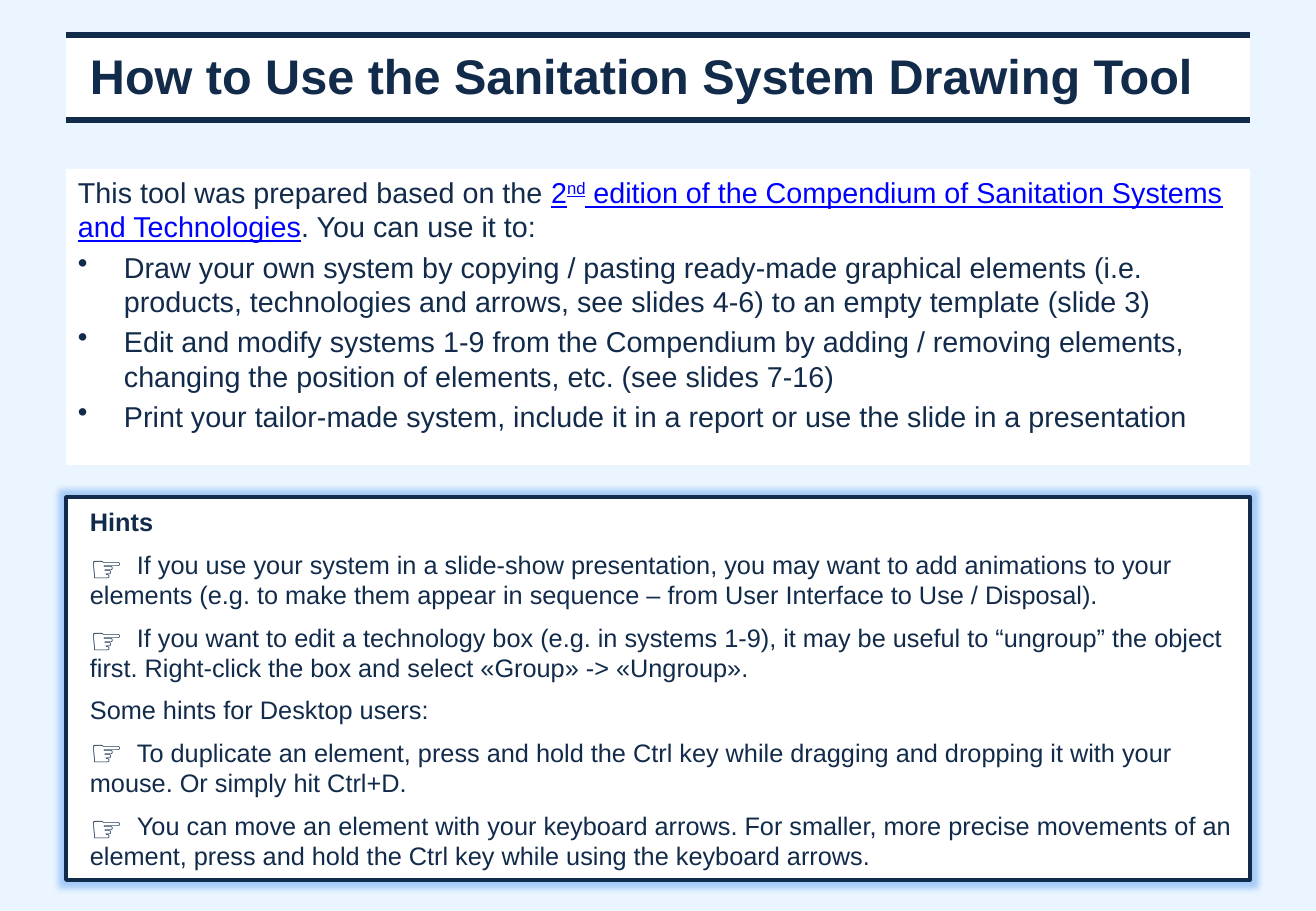
from lxml.etree import SubElement
from pptx import Presentation
from pptx.dml.color import RGBColor
from pptx.enum.shapes import MSO_CONNECTOR, MSO_SHAPE
from pptx.enum.text import MSO_ANCHOR, PP_ALIGN
from pptx.oxml.ns import qn
from pptx.util import Pt

PX = 7526
HEX = {"back": "EBF5FF", "box": "FFFFFF", "ink": "122B4A", "link": "0000FF", "glow": "3C8CED"}

TITLE = "How to Use the Sanitation System Drawing Tool"
INTRO = [  # text, part of the link, superscript
    ("This tool was prepared based on the ", False, False),
    ("2", True, False),
    ("nd", True, True),
    (" edition of the Compendium of Sanitation Systems and Technologies", True, False),
    (". You can use it to:", False, False),
]
USES = [
    "Draw your own system by copying / pasting ready-made graphical elements (i.e. products, "
    "technologies and arrows, see slides 4-6) to an empty template (slide 3)",
    "Edit and modify systems 1-9 from the Compendium by adding / removing elements, "
    "changing the position of elements, etc. (see slides 7-16)",
    "Print your tailor-made system, include it in a report or use the slide in a presentation",
]
HINTS = [  # text, top of its hand relative to the box (None: no hand)
    ("Hints", None),
    ("If you use your system in a slide-show presentation, you may want to add animations to your "
     "elements (e.g. to make them appear in sequence – from User Interface to Use / Disposal).", 42),
    ("If you want to edit a technology box (e.g. in systems 1-9), it may be useful to “ungroup” "
     "the object first. Right-click the box and select «Group» -> «Ungroup».", 114),
    ("Some hints for Desktop users:", None),
    ("To duplicate an element, press and hold the Ctrl key while dragging and dropping it with "
     "your mouse. Or simply hit Ctrl+D.", 226),
    ("You can move an element with your keyboard arrows. For smaller, more precise movements of "
     "an element, press and hold the Ctrl key while using the keyboard arrows.", 302),
]


def color(name):
    return RGBColor.from_string(HEX[name])


def paint(fill, name):
    fill.solid()
    fill.fore_color.rgb = color(name)


def style(para, size, bold=False, left=0, first=0):
    """Set font, alignment and indents of a paragraph."""
    font = para.font
    font.name, font.size, font.bold = "Arial", Pt(size), bold
    font.color.rgb = color("ink")
    para.alignment = PP_ALIGN.LEFT
    props = para._p.get_or_add_pPr()
    props.set("marL", str(left * PX))
    props.set("indent", str(first * PX))
    return props


def add_text(slide, x, y, w, h, fill=None):
    box = slide.shapes.add_textbox(x * PX, y * PX, w * PX, h * PX)
    box.text_frame.word_wrap = True
    if fill:
        paint(box.fill, fill)
    return box.text_frame


def add_rule(slide, x, y, w):
    rule = slide.shapes.add_connector(
        MSO_CONNECTOR.STRAIGHT, x * PX, y * PX, (x + w) * PX, y * PX)
    rule.line.color.rgb = color("ink")
    rule.line.width = Pt(3)
    SubElement(rule._element.spPr, qn("a:effectLst"))


def add_title(slide, x, y, w, h):
    frame = add_text(slide, x, y, w, h, "box")
    frame.vertical_anchor = MSO_ANCHOR.MIDDLE
    frame.margin_left = frame.margin_right = 12 * PX
    frame.margin_top, frame.margin_bottom = 0, 5 * PX
    para = frame.paragraphs[0]
    para.text = TITLE
    style(para, 28.8, bold=True, left=12)
    for edge in (y - 1, y + h):
        add_rule(slide, x, edge, w)


def add_intro(slide, x, y, w, h):
    frame = add_text(slide, x, y, w, h, "box")
    para = frame.paragraphs[0]
    style(para, 17)
    para.line_spacing = Pt(20.4)
    for text, link, sup in INTRO:
        run = para.add_run()
        run.text = text
        if link:
            run.font.color.rgb = color("link")
            run.font.underline = True
        if sup:
            run.font._element.set("baseline", "30000")
    for text in USES:
        para = frame.add_paragraph()
        para.text = text
        para.line_spacing = Pt(20.4)
        para.space_before = Pt(3.4)
        props = style(para, 17, left=46, first=-46)
        bullet = props.makeelement(qn("a:buChar"), {"char": "•"})
        props.insert_element_before(bullet, "a:tabLst", "a:defRPr", "a:extLst")


def add_glow(shape):
    effects = shape._element.spPr.find(qn("a:effectLst"))
    glow = SubElement(effects, qn("a:glow"), rad=str(Pt(8)))
    tint = SubElement(glow, qn("a:srgbClr"), val=HEX["glow"])
    SubElement(tint, qn("a:alpha"), val="40000")


def add_hints(slide, x, y, w, h):
    box = slide.shapes.add_shape(
        MSO_SHAPE.FLOWCHART_PROCESS, x * PX, y * PX, w * PX, h * PX)
    paint(box.fill, "box")
    box.line.color.rgb = color("ink")
    box.line.width = Pt(2)
    box.shadow.inherit = False
    add_glow(box)
    frame = box.text_frame
    frame.word_wrap = True
    frame.vertical_anchor = MSO_ANCHOR.MIDDLE
    for i, (text, top) in enumerate(HINTS):
        para = frame.add_paragraph() if i else frame.paragraphs[0]
        para.text = text
        para.line_spacing = Pt(17.8)
        para.space_before = Pt(7.6 if i else 0)
        style(para, 15, bold=i == 0, left=12, first=0 if top is None else 47)
        if top is not None:
            hand = add_text(slide, x + 12, y + top, 55, 57).paragraphs[0]
            hand.text = "☞"
            style(hand, 22, bold=True)


def main():
    deck = Presentation()
    deck.slide_width, deck.slide_height = 1316 * PX, 911 * PX
    slide = deck.slides.add_slide(deck.slide_layouts[6])
    paint(slide.background.fill, "back")
    left, wide = 66, 1184
    add_title(slide, left, 36, wide, 84)
    add_intro(slide, left, 169, wide, 296)
    add_hints(slide, left, 497, wide, 383)
    deck.save("out.pptx")


if __name__ == "__main__":
    main()
